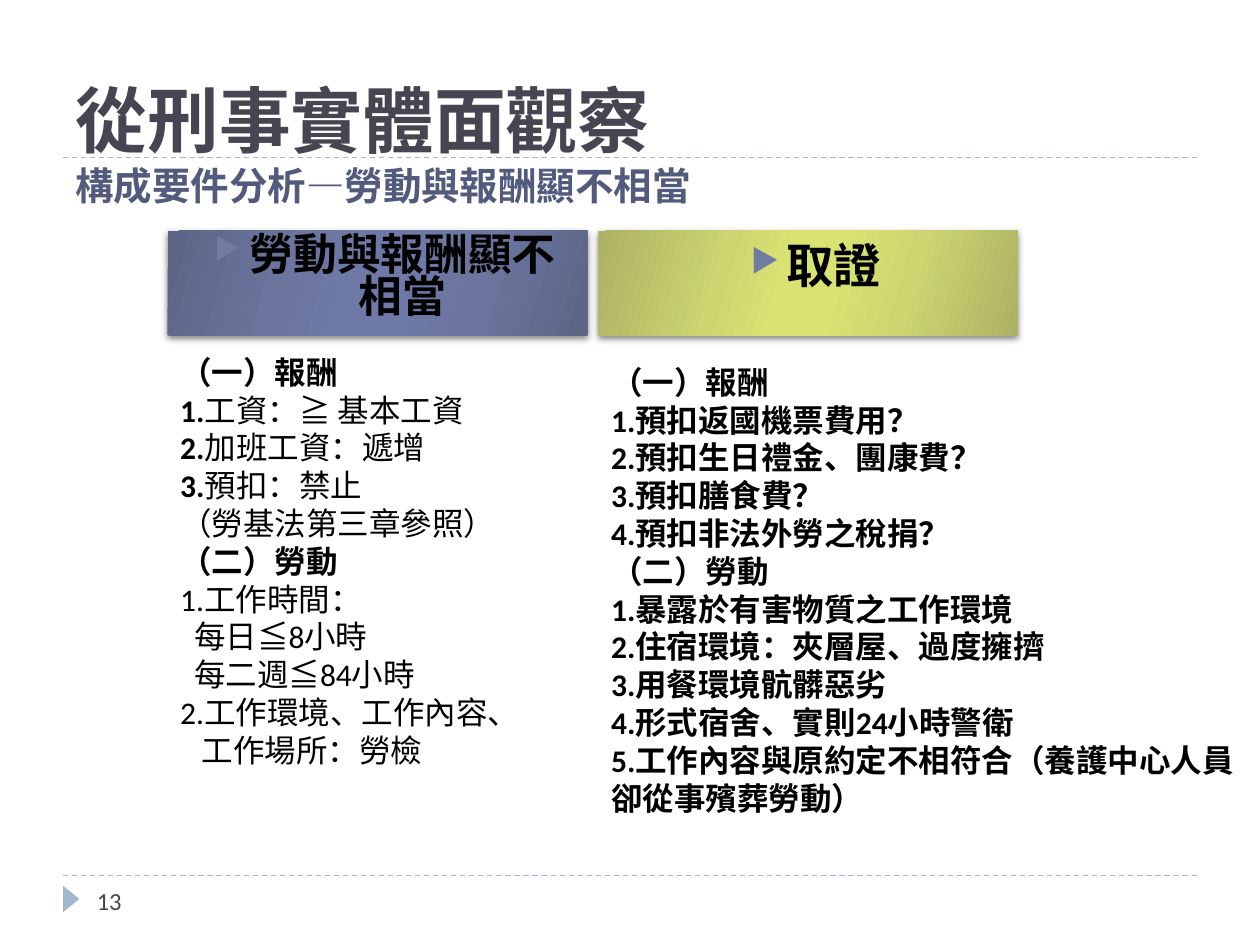
from lxml import etree
from pptx import Presentation
from pptx.dml.color import RGBColor
from pptx.enum.dml import MSO_LINE
from pptx.enum.shapes import MSO_CONNECTOR, MSO_SHAPE
from pptx.enum.text import MSO_ANCHOR, MSO_AUTO_SIZE, PP_ALIGN
from pptx.oxml import parse_xml
from pptx.oxml.ns import nsdecls, qn
from pptx.util import Inches, Pt

DASH = MSO_LINE.DASH
STRAIGHT = MSO_CONNECTOR.STRAIGHT
RECTANGLE, TRIANGLE = MSO_SHAPE.RECTANGLE, MSO_SHAPE.ISOSCELES_TRIANGLE
TOP, MIDDLE = MSO_ANCHOR.TOP, MSO_ANCHOR.MIDDLE
NO_AUTOFIT = MSO_AUTO_SIZE.NONE
LEFT, CENTER = PP_ALIGN.LEFT, PP_ALIGN.CENTER

BLACK = RGBColor(0x00, 0x00, 0x00)
DARK = RGBColor(0x46, 0x46, 0x53)
SUBTITLE = RGBColor(0x52, 0x5B, 0x7E)
PALE_BLUE = RGBColor(0x9F, 0xB8, 0xCD)
BULLET = RGBColor(0x72, 0x7C, 0xA3)
# Gradient colours from the edge to the centre
BLUE_SHADES = (RGBColor(0x5D, 0x65, 0x85), RGBColor(0x6B, 0x75, 0x9E), RGBColor(0x6E, 0x79, 0xA7))
GREEN_SHADES = (RGBColor(0xAC, 0xB2, 0x64), RGBColor(0xCC, 0xD5, 0x70), RGBColor(0xD9, 0xE3, 0x71))

TITLE_FORMAT = {"name": "Noto Sans CJK SC", "size": Pt(41), "bold": True, "color": DARK}
SUBTITLE_FORMAT = {**TITLE_FORMAT, "size": Pt(22), "color": SUBTITLE}
BODY_FORMAT = {"name": "Calibri", "size": Pt(18), "bold": False, "color": BLACK}
BOLD_FORMAT = {**BODY_FORMAT, "bold": True}
NUMBER_FORMAT = {**BODY_FORMAT, "size": Pt(14), "color": DARK}

# Each line: bold part, plain part, left indent in inches
LABOUR_LINES = [
    ("（一）報酬", "", 0),
    ("1.", "工資：≧ 基本工資", 0),
    ("2.", "加班工資：遞增", 0),
    ("3.", "預扣：禁止", 0),
    ("", "（勞基法第三章參照）", 0),
    ("（二）勞動", "", 0),
    ("", "1.工作時間：", 0),
    ("", "每日≦8小時", 0.11),
    ("", "每二週≦84小時", 0.11),
    ("", "2.工作環境、工作內容、", 0),
    ("", "工作場所：勞檢", 0.17),
]
EVIDENCE_LINES = [(text, "", 0) for text in (
    "（一）報酬",
    "1.預扣返國機票費用？",
    "2.預扣生日禮金、團康費？",
    "3.預扣膳食費？",
    "4.預扣非法外勞之稅捐？",
    "（二）勞動",
    "1.暴露於有害物質之工作環境",
    "2.住宿環境：夾層屋、過度擁擠",
    "3.用餐環境骯髒惡劣",
    "4.形式宿舍、實則24小時警衛",
    "5.工作內容與原約定不相符合（養護中心人員卻從事殯葬勞動）",
)]


class SlideBuilder:
    def __init__(self, slide):
        self.slide = slide
        self.shapes = slide.shapes

    def place(self, shape, box):
        for name, value in zip(("left", "top", "width", "height"), box):
            setattr(shape, name, Inches(value))

    def frame(self, shape, anchor):
        frame = shape.text_frame
        settings = {"word_wrap": True, "auto_size": NO_AUTOFIT, "vertical_anchor": anchor}
        for name, value in settings.items():
            setattr(frame, name, value)
        return frame

    def run(self, paragraph, text, style):
        run = paragraph.add_run()
        run.text = text
        for name, value in style.items():
            if name == "color":
                run.font.color.rgb = value
            else:
                setattr(run.font, name, value)

    def indent(self, paragraph, margin, first_line=0):
        properties = paragraph._p.get_or_add_pPr()
        properties.set("marL", str(Inches(margin)))
        properties.set("indent", str(Inches(first_line)))
        return properties

    def rule(self, y):
        line = self.shapes.add_connector(STRAIGHT, Inches(0.5), Inches(y), Inches(9.5), Inches(y))
        line.line.color.rgb = PALE_BLUE
        line.line.width = Pt(0.75)
        line.line.dash_style = DASH
        etree.SubElement(line._element.spPr, qn("a:effectLst"))

    def marker(self, box):
        shape = self.shapes.add_shape(TRIANGLE, *map(Inches, box))
        shape.rotation = 90
        shape.shadow.inherit = False
        shape.fill.solid()
        shape.fill.fore_color.rgb = PALE_BLUE
        shape.line.fill.background()

    def title(self, box, title, subtitle):
        shape = self.shapes.title
        self.place(shape, box)
        paragraph = self.frame(shape, MIDDLE).paragraphs[0]
        paragraph.alignment = LEFT
        self.run(paragraph, title, TITLE_FORMAT)
        paragraph.add_line_break()
        self.run(paragraph, subtitle, SUBTITLE_FORMAT)

    def body(self, index, box, lines):
        shape = self.slide.placeholders[index]
        self.place(shape, box)
        frame = self.frame(shape, TOP)
        for number, (bold, plain, margin) in enumerate(lines):
            paragraph = frame.add_paragraph() if number else frame.paragraphs[0]
            paragraph.space_before = Pt(0)
            properties = self.indent(paragraph, margin)
            etree.SubElement(properties, qn("a:buNone"))
            for text, style in ((bold, BOLD_FORMAT), (plain, BODY_FORMAT)):
                if text:
                    self.run(paragraph, text, style)

    def header(self, box, text, size, shades, line_spacing=1.0):
        shape = self.shapes.add_shape(RECTANGLE, *map(Inches, box))
        shape.line.fill.background()
        self.gradient_and_shadow(shape, shades)
        paragraph = self.frame(shape, TOP).paragraphs[0]
        settings = {"alignment": CENTER, "line_spacing": line_spacing, "space_before": Pt(4)}
        for name, value in settings.items():
            setattr(paragraph, name, value)
        properties = self.indent(paragraph, 0.4, -0.28)
        color = etree.SubElement(properties, qn("a:buClr"))
        etree.SubElement(color, qn("a:srgbClr"), val=str(BULLET))
        etree.SubElement(properties, qn("a:buSzPct"), val="68000")
        etree.SubElement(properties, qn("a:buChar"), char="▶")
        self.run(paragraph, text, {**BOLD_FORMAT, "size": Pt(size)})

    def gradient_and_shadow(self, shape, shades):
        edge, middle, center = shades
        stops = zip((0, 30, 45, 55, 73, 100), (edge, middle, center, center, middle, edge))
        stop_xml = "".join(
            f'<a:gs pos="{position * 1000}"><a:srgbClr val="{color}"/></a:gs>'
            for position, color in stops)
        properties = shape._element.spPr
        properties.find(qn("a:prstGeom")).addnext(parse_xml(
            f'<a:gradFill {nsdecls("a")} rotWithShape="1"><a:gsLst>{stop_xml}</a:gsLst>'
            f'<a:lin ang="{16 * 60000}" scaled="0"/></a:gradFill>'))
        properties.append(parse_xml(
            f'<a:effectLst {nsdecls("a")}><a:outerShdw blurRad="{Pt(4)}" dist="{Pt(2)}" '
            f'dir="{90 * 60000}" rotWithShape="0"><a:srgbClr val="{BLACK}">'
            '<a:alpha val="50000"/></a:srgbClr></a:outerShdw></a:effectLst>'))

    def page_number(self, box, text):
        shape = self.shapes.add_textbox(*map(Inches, box))
        self.run(self.frame(shape, MIDDLE).paragraphs[0], text, NUMBER_FORMAT)


def main():
    presentation = Presentation()
    presentation.slide_width, presentation.slide_height = Inches(10), Inches(7.5)
    two_content = presentation.slide_layouts[3]
    builder = SlideBuilder(presentation.slides.add_slide(two_content))

    for y in (6.95, 1.25):
        builder.rule(y)
    builder.marker((0.46, 7.07, 0.21, 0.13))
    builder.title((0.5, 0.5, 9, 1.25), "從刑事實體面觀察", "構成要件分析—勞動與報酬顯不相當")
    builder.header((1.33, 1.83, 3.33, 0.83), "勞動與報酬顯不相當", 25, BLUE_SHADES, 0.8)
    builder.header((4.75, 1.83, 3.33, 0.83), "取證", 27, GREEN_SHADES)
    builder.body(1, (1.33, 2.75, 3.17, 3.74), LABOUR_LINES)
    builder.body(2, (4.75, 2.83, 5.25, 4.04), EVIDENCE_LINES)
    builder.page_number((0.67, 6.95, 2.17, 0.4), "13")
    presentation.save("out.pptx")


if __name__ == "__main__":
    main()
